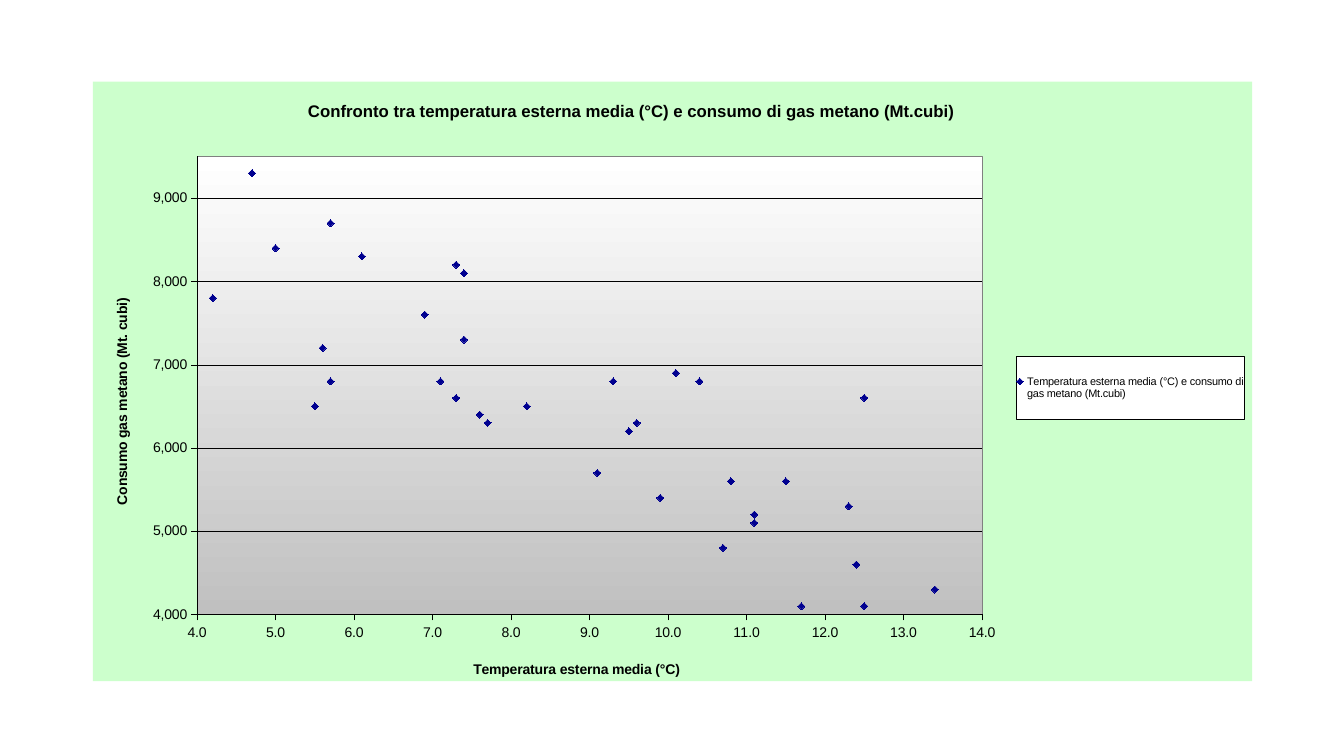
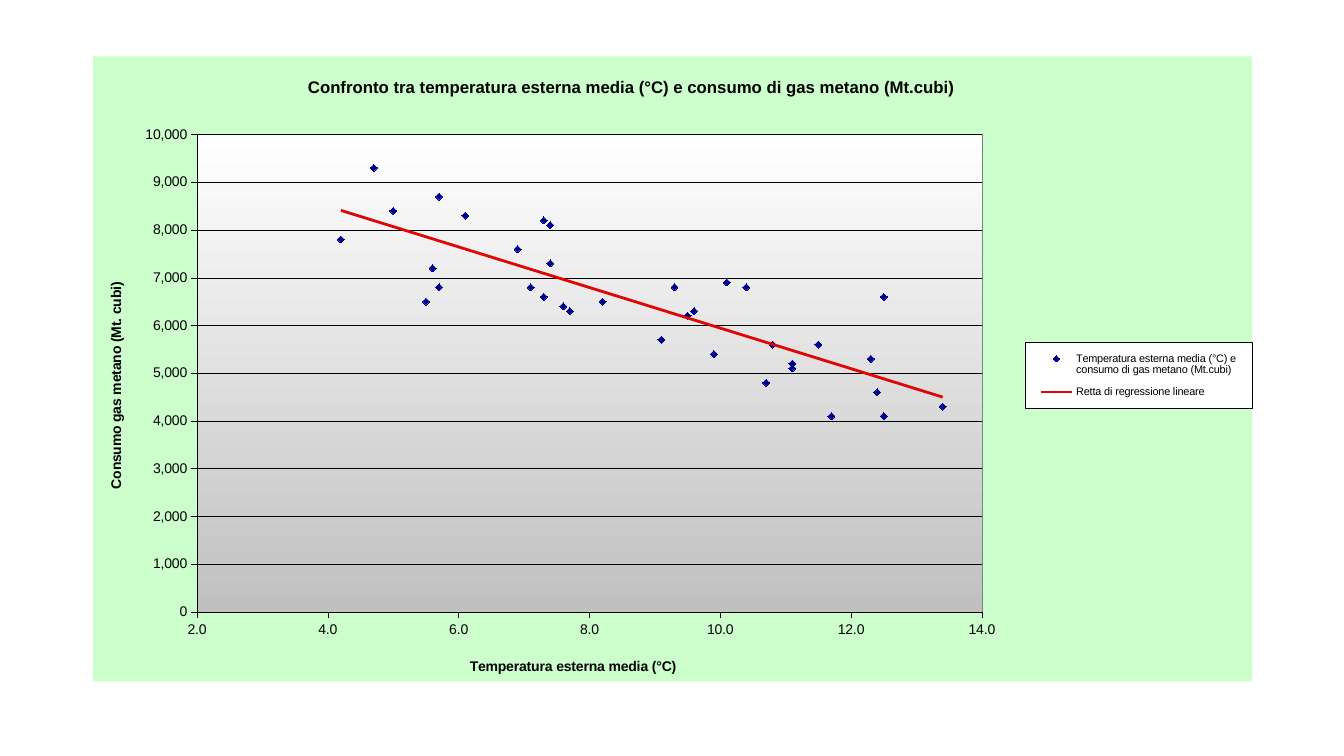
from pptx import Presentation
from pptx.chart.data import XyChartData
from pptx.dml.color import RGBColor
from pptx.enum.chart import XL_CHART_TYPE as ChartType, XL_LEGEND_POSITION as LegendPosition
from pptx.enum.chart import XL_MARKER_STYLE as MarkerStyle, XL_TICK_MARK as TickMark
from pptx.oxml import parse_xml
from pptx.oxml.ns import nsdecls, qn
from pptx.util import Inches, Pt

FONT = "Arial"
BLACK, WHITE, GREY, SILVER = "000000", "FFFFFF", "808080", "C0C0C0"
GREEN, NAVY, RED = "CCFFCC", "000090", "DD0806"
HAIRLINE = 0.25

TITLE = "Confronto tra temperatura esterna media (°C) e consumo di gas metano (Mt.cubi)"
SERIES = "Temperatura esterna media (°C) e consumo di gas metano (Mt.cubi)"
X_TITLE = "Temperatura esterna media (°C)"
Y_TITLE = "Consumo gas metano (Mt. cubi)"
TREND = "Retta di regressione lineare"

TEMPERATURES = [
    11.5, 6.9, 5, 7.3, 9.3, 10.7, 5.6, 5.7, 7.4, 10.1, 10.4, 8.2,
    4.7, 4.2, 12.5, 12.3, 5.5, 6.1, 5.7, 9.6, 12.5, 7.4, 9.5, 11.1,
    12.4, 13.4, 9.1, 7.3, 7.6, 11.1, 11.7, 7.7, 7.1, 9.9, 10.8,
]
CONSUMPTION = [
    5600, 7600, 8400, 8200, 6800, 4800, 7200, 8700, 8100, 6900, 6800, 6500,
    9300, 7800, 6600, 5300, 6500, 8300, 6800, 6300, 4100, 7300, 6200, 5100,
    4600, 4300, 5700, 6600, 6400, 5200, 4100, 6300, 6800, 5400, 5600,
]


def rgb(value):
    return RGBColor.from_string(value)


def solid(value):
    return f'<a:solidFill><a:srgbClr val="{value}"/></a:solidFill>'


def outline(value, points):
    return f'<a:ln w="{Pt(points)}">{solid(value)}</a:ln>'


def gradient(top, bottom):
    return (f'<a:gradFill><a:gsLst><a:gs pos="0"><a:srgbClr val="{top}"/></a:gs>'
            f'<a:gs pos="100000"><a:srgbClr val="{bottom}"/></a:gs></a:gsLst>'
            '<a:lin ang="5400000" scaled="0"/></a:gradFill>')


def shape_properties(content):
    return parse_xml(f'<c:spPr {nsdecls("c", "a")}>{content}</c:spPr>')


def place(element, left, top, width=None, height=None, inner=False):
    for old in element.findall(qn("c:layout")):
        element.remove(old)
    target = '<c:layoutTarget val="inner"/>' if inner else ""
    sizes = [("x", left), ("y", top)]
    if width is not None:
        sizes += [("w", width), ("h", height)]
    values = "".join(f'<c:{name} val="{size}"/>' for name, size in sizes)
    layout = parse_xml(
        f'<c:layout {nsdecls("c")}><c:manualLayout>{target}<c:xMode val="edge"/>'
        f'<c:yMode val="edge"/>{values}</c:manualLayout></c:layout>')
    leaders = element.xpath("./c:tx | ./c:legendPos")
    if leaders:
        leaders[-1].addnext(layout)
    else:
        element.insert(0, layout)


def write_title(title, text, size, left, top):
    title.text_frame.text = text
    font = title.text_frame.paragraphs[0].runs[0].font
    font.name, font.size, font.bold = FONT, Pt(size), True
    font.color.rgb = rgb(BLACK)
    place(title._element, left, top)


def hairline(line):
    line.color.rgb = rgb(BLACK)
    line.width = Pt(HAIRLINE)


def style_axis(axis, scale, number_format):
    axis.minimum_scale, axis.maximum_scale, axis.major_unit = scale
    axis.major_tick_mark, axis.minor_tick_mark = TickMark.OUTSIDE, TickMark.NONE
    axis.tick_labels.number_format = number_format
    axis.tick_labels.number_format_is_linked = False
    axis.tick_labels.font.size = Pt(10)
    hairline(axis.format.line)


def style_axes(chart, x_scale, y_scale, x_title_at, y_title_at):
    x_axis, y_axis = chart.category_axis, chart.value_axis
    style_axis(x_axis, x_scale, "0.0")
    style_axis(y_axis, y_scale, "#,##0")
    x_axis.has_major_gridlines = False
    y_axis.has_major_gridlines = True
    hairline(y_axis.major_gridlines.format.line)
    write_title(x_axis.axis_title, X_TITLE, 10, *x_title_at)
    write_title(y_axis.axis_title, Y_TITLE, 10, *y_title_at)
    body = y_axis.axis_title.text_frame._txBody.bodyPr
    body.set("rot", "-5400000")
    body.set("vert", "horz")


def style_points(plot):
    plot.vary_by_categories = False
    series = plot.series[0]
    series.format.line.fill.background()
    series.marker.style, series.marker.size = MarkerStyle.DIAMOND, 5
    series.marker.format.fill.solid()
    series.marker.format.fill.fore_color.rgb = rgb(NAVY)
    series.marker.format.line.color.rgb = rgb(NAVY)
    for smooth in series._element.findall(qn("c:smooth")):
        smooth.set("val", "0")
    return series


def add_trend(series):
    trend = parse_xml(
        f'<c:trendline {nsdecls("c", "a")}><c:name>{TREND}</c:name>'
        f'<c:spPr>{outline(RED, 2)}</c:spPr><c:trendlineType val="linear"/>'
        '<c:dispRSqr val="0"/><c:dispEq val="0"/></c:trendline>')
    series._element.find(qn("c:xVal")).addprevious(trend)


def style_legend(chart):
    chart.has_legend = True
    legend = chart.legend
    legend.position = LegendPosition.RIGHT
    legend.include_in_layout = False
    legend.font.name, legend.font.size = FONT, Pt(7.8)
    legend.font.color.rgb = rgb(BLACK)
    place(legend._element, 0.804, 0.458, 0.196, 0.105)
    legend._element.find(qn("c:overlay")).addnext(
        shape_properties(solid(WHITE) + outline(BLACK, HAIRLINE)))


def style_backgrounds(chart):
    space = chart._chartSpace
    plot_area = space.xpath("c:chart/c:plotArea")[0]
    place(plot_area, 0.09, 0.125, 0.677, 0.764, inner=True)
    plot_area.append(shape_properties(gradient(WHITE, SILVER) + outline(GREY, HAIRLINE)))
    space.find(qn("c:chart")).addnext(
        shape_properties(solid(GREEN) + "<a:ln><a:noFill/></a:ln>"))


def add_scatter_slide(deck, box, x_scale, y_scale, x_title_at, y_title_at, trend=False):
    page = deck.slides.add_slide(deck.slide_layouts[6])
    data = XyChartData()
    points = data.add_series(SERIES)
    for temperature, gas in zip(TEMPERATURES, CONSUMPTION):
        points.add_data_point(temperature, gas)
    chart = page.shapes.add_chart(
        ChartType.XY_SCATTER, *[Inches(length) for length in box], data).chart
    chart.font.name, chart.font.size = FONT, Pt(10)
    chart.font.color.rgb = rgb(BLACK)
    chart.has_title = True
    write_title(chart.chart_title, TITLE, 12, 0.183, 0.027)
    style_axes(chart, x_scale, y_scale, x_title_at, y_title_at)
    series = style_points(chart.plots[0])
    if trend:
        add_trend(series)
    style_legend(chart)
    style_backgrounds(chart)


def main():
    deck = Presentation()
    deck.slide_width, deck.slide_height = Inches(13.33), Inches(7.5)
    add_scatter_slide(deck, (0.92, 0.81, 11.5, 5.95), (4, 14, 1), (4000, 9500, 1000),
                      (0.326, 0.96), (0.015, 0.357))
    add_scatter_slide(deck, (0.92, 0.56, 11.5, 6.2), (2, 14, 2), (0, 10000, 1000),
                      (0.323, 0.957), (0.01, 0.357), trend=True)
    deck.save("out.pptx")


if __name__ == "__main__":
    main()
